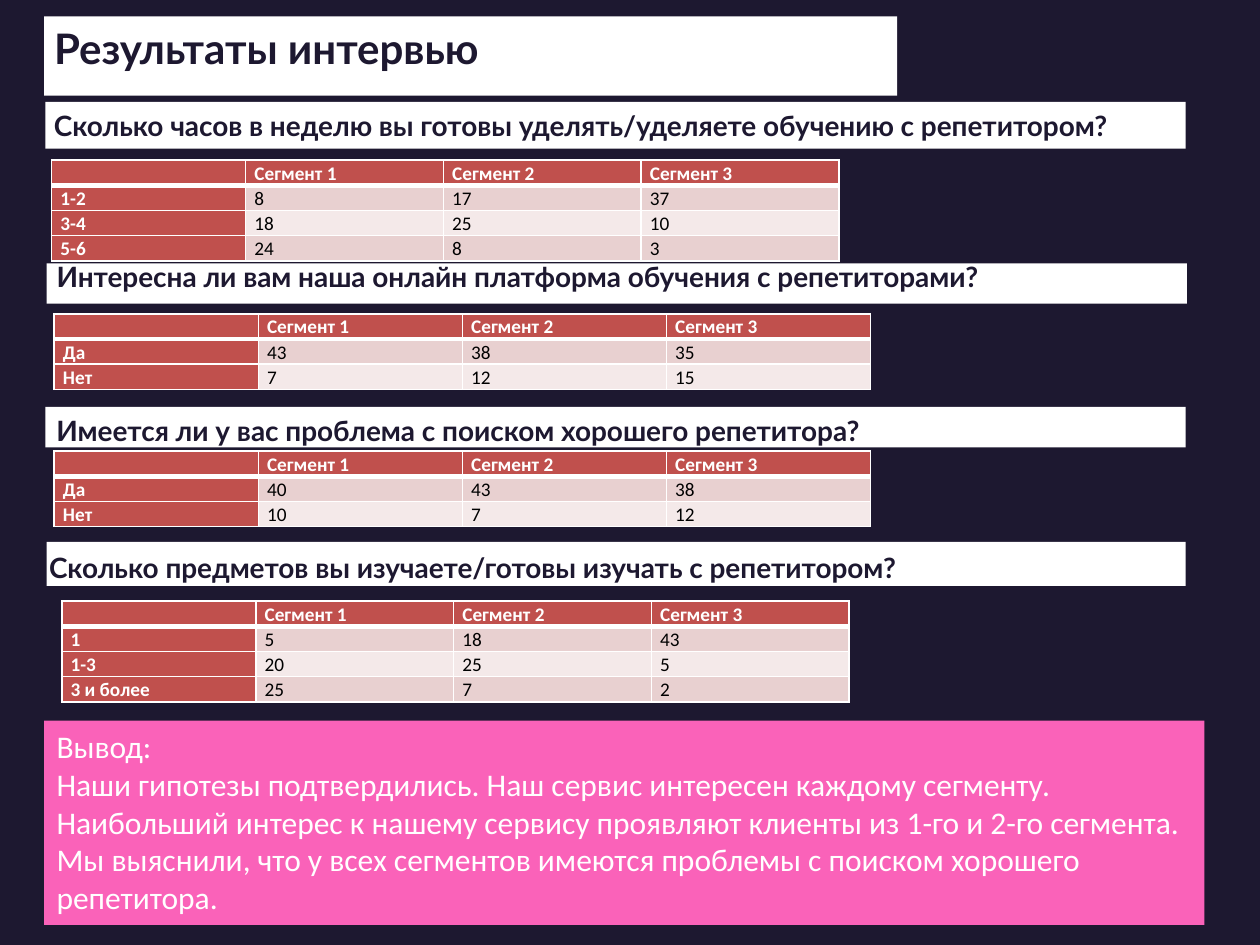
from dataclasses import dataclass

from lxml import etree
from pptx import Presentation
from pptx.dml.color import RGBColor
from pptx.enum.shapes import MSO_SHAPE
from pptx.enum.text import MSO_ANCHOR, PP_ALIGN
from pptx.oxml.ns import qn
from pptx.util import Inches, Pt

RECTANGLE = MSO_SHAPE.RECTANGLE
TOP = MSO_ANCHOR.TOP
LEFT = PP_ALIGN.LEFT

NAVY, WHITE, BLACK, PINK = "1D1830", "FFFFFF", "000000", "FA62B9"
RED, ROSE, PALE_ROSE = "C0504D", "E8D0D0", "F4E9E9"
HEADER = ("", "Сегмент 1", "Сегмент 2", "Сегмент 3")
ROW_HEIGHT = 0.2


@dataclass(frozen=True)
class Box:
    left: float
    top: float
    width: float
    height: float

    def lengths(self) -> tuple:
        return tuple(Inches(v) for v in (self.left, self.top, self.width, self.height))


@dataclass(frozen=True)
class Question:
    wording: str
    band: Box
    label: Box
    table_left: float
    table_top: float
    columns: tuple
    answers: tuple
    indent: float = 0.1


WIDE_COLUMNS = (1.62,) * 4
NARROW_COLUMNS = (1.54, 1.57, 1.57, 1.57)

QUESTIONS = (
    Question(
        "Сколько часов в неделю вы готовы уделять/уделяете обучению с репетитором?",
        Box(0.36, 0.81, 9.05, 0.37), Box(0.33, 0.81, 9.67, 0.37),
        0.41, 1.27, NARROW_COLUMNS,
        (("1-2", "8", "17", "37"), ("3-4", "18", "25", "10"), ("5-6", "24", "8", "3")),
    ),
    Question(
        "Интересна ли вам наша онлайн платформа обучения с репетиторами?",
        Box(0.37, 2.09, 9.05, 0.32), Box(0.35, 2.01, 8.58, 0.37),
        0.43, 2.49, WIDE_COLUMNS,
        (("Да", "43", "38", "35"), ("Нет", "7", "12", "15")),
    ),
    Question(
        "Имеется ли у вас проблема с поиском хорошего репетитора?",
        Box(0.36, 3.23, 9.05, 0.32), Box(0.35, 3.23, 9.44, 0.37),
        0.43, 3.58, WIDE_COLUMNS,
        (("Да", "40", "43", "38"), ("Нет", "10", "7", "12")),
    ),
    Question(
        "Сколько предметов вы изучаете/готовы изучать с репетитором?",
        Box(0.37, 4.3, 9.04, 0.35), Box(0.04, 4.32, 7.54, 0.67),
        0.49, 4.77, NARROW_COLUMNS,
        (("1", "5", "18", "43"), ("1-3", "20", "25", "5"), ("3 и более", "25", "7", "2")),
        indent=0.35,
    ),
)

CONCLUSION = (
    "Вывод:",
    "Наши гипотезы подтвердились. Наш сервис интересен каждому сегменту. "
    "Наибольший интерес к нашему сервису проявляют клиенты из 1-го и 2-го сегмента. "
    "Мы выяснили, что у всех сегментов имеются проблемы с поиском хорошего репетитора.",
)


def paint(color_format, color: str) -> None:
    color_format.rgb = RGBColor.from_string(color)


def fill(target, color: str) -> None:
    target.fill.solid()
    paint(target.fill.fore_color, color)


def write(paragraph, text: str, size: float, font: str, color: str, bold: bool) -> None:
    paragraph.alignment = LEFT
    run = paragraph.add_run()
    run.text = text
    run.font.size = Pt(size)
    run.font.name = font
    run.font.bold = bold
    paint(run.font.color, color)


def add_band(slide, box: Box, color: str):
    band = slide.shapes.add_shape(RECTANGLE, *box.lengths())
    band.shadow.inherit = False
    fill(band, color)
    band.line.fill.background()
    return band


def set_borders(cell, bottom_width: float) -> None:
    properties = cell._tc.get_or_add_tcPr()
    for position, side in enumerate(("lnL", "lnR", "lnT", "lnB")):
        width = bottom_width if side == "lnB" else 1
        border = etree.Element(qn(f"a:{side}"), w=str(Pt(width)))
        solid = etree.SubElement(border, qn("a:solidFill"))
        etree.SubElement(solid, qn("a:srgbClr"), val=WHITE)
        properties.insert(position, border)


def fill_cell(cell, text: str, row: int, column: int) -> None:
    heading = row == 0 or column == 0
    cell.margin_left = cell.margin_right = Inches(0.07)
    cell.margin_top = cell.margin_bottom = 0
    fill(cell, RED if heading else ROSE if row % 2 else PALE_ROSE)
    set_borders(cell, 3 if row == 0 else 1)
    paragraph = cell.text_frame.paragraphs[0]
    paragraph.line_spacing = 1.07
    if text:
        write(paragraph, text, 11, "Calibri", WHITE if heading else BLACK, heading)
    else:
        etree.SubElement(paragraph._p, qn("a:endParaRPr"), sz="1100")


def add_answers(slide, question: Question) -> None:
    rows = (HEADER, *question.answers)
    box = Box(question.table_left, question.table_top,
              sum(question.columns), ROW_HEIGHT * len(rows))
    answers = slide.shapes.add_table(len(rows), len(HEADER), *box.lengths()).table
    answers.first_col = True
    for column, width in zip(answers.columns, question.columns):
        column.width = Inches(width)
    for r, texts in enumerate(rows):
        answers.rows[r].height = Inches(ROW_HEIGHT)
        for c, text in enumerate(texts):
            fill_cell(answers.cell(r, c), text, r, c)


def add_question(slide, question: Question) -> None:
    add_band(slide, question.band, WHITE)
    label = slide.shapes.add_textbox(*question.label.lengths()).text_frame
    label.word_wrap = True
    label.margin_left = Inches(question.indent)
    write(label.paragraphs[0], question.wording, 16, "Lato", NAVY, True)
    add_answers(slide, question)


def add_title(slide) -> None:
    title = slide.shapes.title
    title.left, title.top, title.width, title.height = Box(0.33, 0.13, 3.76, 0.5).lengths()
    title.text_frame.vertical_anchor = TOP
    write(title.text_frame.paragraphs[0], "Результаты интервью", 24, "Lato", NAVY, True)
    band = add_band(slide, Box(0.35, 0.13, 6.77, 0.63), WHITE)
    title.element.addprevious(band.element)


def add_conclusion(slide) -> None:
    frame = add_band(slide, Box(0.35, 5.72, 9.21, 1.62), PINK).text_frame
    frame.word_wrap = True
    frame.vertical_anchor = TOP
    for index, text in enumerate(CONCLUSION):
        paragraph = frame.add_paragraph() if index else frame.paragraphs[0]
        write(paragraph, text, 18, "Calibri", WHITE, False)


def main() -> None:
    presentation = Presentation()
    presentation.slide_width = Inches(10)
    presentation.slide_height = Inches(7.5)
    slide = presentation.slides.add_slide(presentation.slide_layouts[5])
    fill(slide.background, NAVY)
    add_title(slide)
    for question in QUESTIONS:
        add_question(slide, question)
    add_conclusion(slide)
    presentation.save("out.pptx")


if __name__ == "__main__":
    main()
